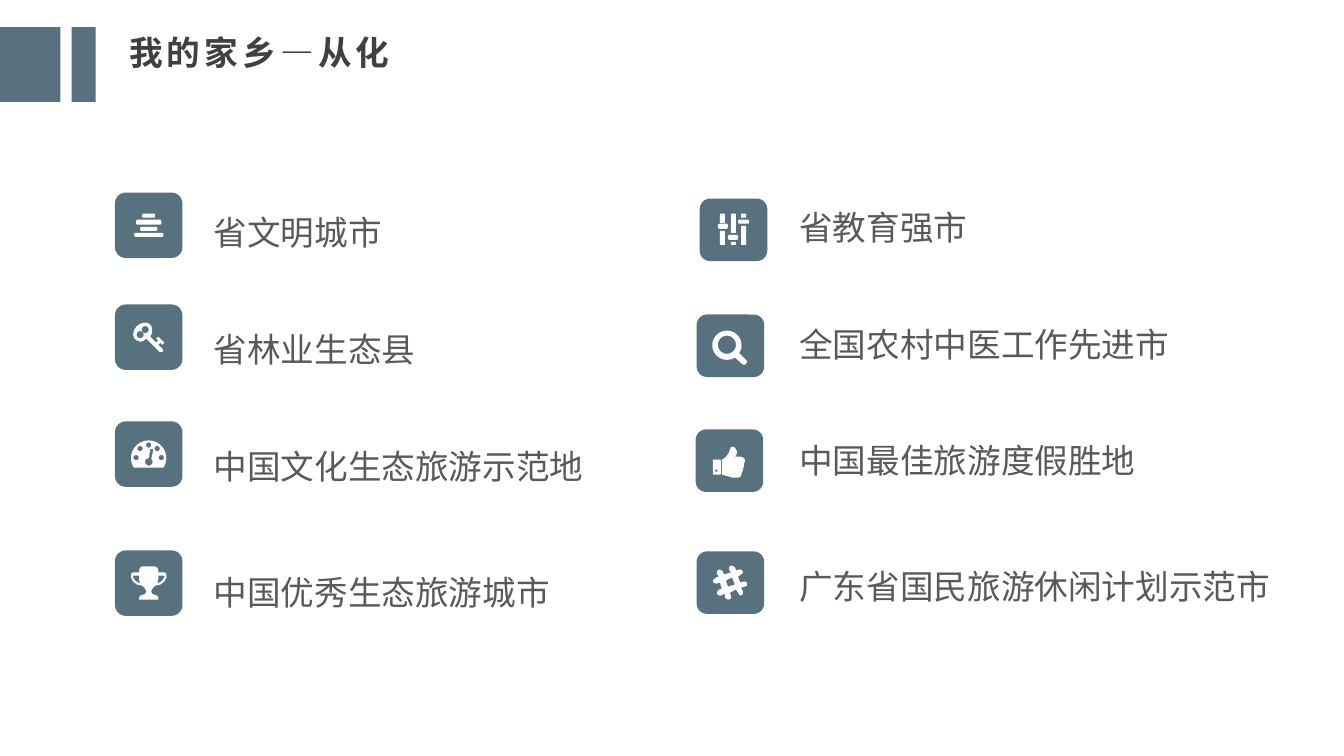
from dataclasses import dataclass
from math import cos, radians, sin

from pptx import Presentation
from pptx.dml.color import RGBColor
from pptx.enum.shapes import MSO_SHAPE as Shape
from pptx.enum.text import MSO_ANCHOR as Anchor, MSO_AUTO_SIZE as AutoSize, PP_ALIGN as Align
from pptx.oxml.ns import qn
from pptx.util import Inches, Pt

SLATE, WHITE, GREY, DARK = "58717E", "FFFFFF", "595959", "404040"
CJK = "Noto Sans CJK SC"
Contour = list[tuple[float, float]]


# Outline helpers, in hundredths of an inch from the icon's top left corner
def arc(cx: float, cy: float, radius: float, start: float, end: float, steps: int = 32) -> Contour:
    angles = [radians(start + (end - start) * i / steps) for i in range(steps + 1)]
    return [(cx + radius * cos(a), cy + radius * sin(a)) for a in angles]


def circle(cx: float, cy: float, radius: float) -> Contour:
    return arc(cx, cy, radius, 0, 360)


def bar(x: float, y: float, w: float, h: float, cut: float = 1) -> Contour:
    r, b = x + w, y + h
    return [(x + cut, y), (r - cut, y), (r, y + cut), (r, b - cut),
            (r - cut, b), (x + cut, b), (x, b - cut), (x, y + cut)]


def mirror(points: Contour, width: float) -> Contour:
    return [(width - x, y) for x, y in reversed(points)]


# Icon outlines; inner contours are holes
LAYERS = [bar(8, 0, 13, 4), bar(2, 6, 25, 5), bar(6, 13, 17, 4), bar(0, 19, 29, 4)]

KEY = [
    [(29, 22), (27, 20), (25, 22), (29, 26), (30, 28), (29, 29), (26, 29), (13, 16),
     (10, 18.4), (7, 19), (3, 17.5), (0.8, 15), (0, 12), (1, 7.5), (3.6, 3.6), (7.5, 1),
     (12, 0), (15.5, 0.8), (18, 3), (19, 7), (18.5, 11), (17, 14), (23, 20), (25, 18),
     (23, 16), (25, 14), (31, 20)],
    circle(12, 7, 3.5), circle(7, 12, 3.5),
]

GAUGE = [
    arc(17.5, 17.5, 17.5, 148, 392) + [(32, 27), (4, 27)],
    *[circle(x, y, 2.6) for x, y in [(5, 17), (9, 8), (17.5, 4.5), (26, 8), (30, 17)]],
    arc(17.7, 21.2, 3.7, 270, -50) + [(22, 10), (21.5, 8.5), (20, 8.3), (19, 9)],
]

CUP_RIGHT = [(24, 0), (26.2, 1.3), (27, 4), (27, 6), (33, 6), (34.5, 6.6), (35, 8), (35, 11),
             (33, 15), (29, 18), (24, 19), (22, 21), (20.5, 23), (20, 25), (20.8, 27),
             (23, 28), (26, 29), (27, 31), (27, 33)]
CUP_HANDLE = [(27, 9), (33, 9), (33, 11), (30.5, 14.5), (26, 17), (27, 13)]
TROPHY = [CUP_RIGHT + mirror(CUP_RIGHT, 35), CUP_HANDLE, mirror(CUP_HANDLE, 35)]

SLIDERS = [
    bar(0, 10, 10, 5), bar(2, 0, 5, 9, 0.4), bar(2, 17, 5, 14, 0.4),
    bar(10, 21, 10, 5), bar(13, 0, 5, 19, 0.4), bar(13, 28, 5, 3, 0.4),
    bar(20, 6, 11, 4), bar(23, 0, 5, 4, 0.4), bar(23, 12, 5, 19, 0.4),
]

SEARCH = [
    [(33, 29), (34, 31), (33, 33), (31, 34), (29, 33)] + arc(14, 14.5, 14.5, 57, 393),
    circle(14, 14, 9),
]

THUMB = [
    [(8, 27), (7, 28), (0, 28), (0, 13), (7, 13), (8, 14)],
    circle(3.5, 24, 1.2),
    [(31, 17), (31, 19), (30, 22), (30, 24), (29, 25), (28, 29), (26.5, 30.5), (24, 31),
     (20, 31), (13, 29), (9, 28), (9, 13), (11, 12), (14, 9), (16, 6), (17, 3), (18, 0.5),
     (19, 0), (22, 1), (24, 5), (23.5, 8), (22, 10), (28, 10), (31, 11.5), (32, 14)],
]

HASH = [
    [(34, 18), (33.7, 20), (32, 21), (28, 22), (30, 26), (29.5, 29), (27, 30), (25, 27),
     (23, 24), (17, 27), (18, 30), (18, 33), (15, 34), (12, 32), (12, 28), (8, 30),
     (5, 29.5), (4, 27), (6, 24), (9, 23), (7, 17), (4, 18), (1, 17.5), (0, 15), (3, 12),
     (6, 11), (4, 8), (4.5, 5), (7, 4), (10, 6), (11, 9), (18, 7), (16, 4), (16.5, 1),
     (19, 0), (22, 2), (23, 5), (26, 4), (29, 4.5), (30, 7), (28, 9), (25, 11), (27, 17),
     (30, 16), (33, 16)],
    [(22, 19), (19, 12), (13, 15), (15, 21)],
]


@dataclass
class Honour:
    text: str
    label: tuple[float, float]
    tile: tuple[float, float]
    icon: tuple[float, float]
    outline: list[Contour]
    width: float = 4.49


ROWS = [1.97, 3.13, 4.29, 5.54]
LEFT_X, RIGHT_X, RIGHT_RISE = 2.02, 7.83, 0.05
LEFT = [
    Honour("省文明城市", (LEFT_X, ROWS[0]), (1.14, 1.91), (1.33, 2.12), LAYERS),
    Honour("省林业生态县", (LEFT_X, ROWS[1]), (1.14, 3.02), (1.32, 3.2), KEY),
    Honour("中国文化生态旅游示范地", (LEFT_X, ROWS[2]), (1.14, 4.18), (1.3, 4.37), GAUGE),
    Honour("中国优秀生态旅游城市", (LEFT_X, ROWS[3]), (1.14, 5.46), (1.3, 5.62), TROPHY),
]
RIGHT_ROWS = [y - RIGHT_RISE for y in ROWS]
RIGHT = [
    Honour("省教育强市", (RIGHT_X, RIGHT_ROWS[0]), (6.94, 1.97), (7.12, 2.12), SLIDERS),
    Honour("全国农村中医工作先进市", (RIGHT_X, RIGHT_ROWS[1]), (6.91, 3.12), (7.07, 3.28), SEARCH),
    Honour("中国最佳旅游度假胜地", (RIGHT_X, RIGHT_ROWS[2]), (6.9, 4.26), (7.07, 4.43), THUMB),
    Honour("广东省国民旅游休闲计划示范市", (RIGHT_X, RIGHT_ROWS[3]), (6.91, 5.47), (7.07, 5.61),
           HASH, 5.06),
]


# Drawing functions
def paint(shape, color: str) -> None:
    shape.shadow.inherit = False
    shape.fill.solid()
    shape.fill.fore_color.rgb = RGBColor.from_string(color)
    shape.line.fill.background()


def add_box(shapes, kind: Shape, x: float, y: float, w: float, h: float) -> None:
    paint(shapes.add_shape(kind, Inches(x), Inches(y), Inches(w), Inches(h)), SLATE)


def add_icon(shapes, x: float, y: float, outline: list[Contour]) -> None:
    fine = [[(px * 100, py * 100) for px, py in contour] for contour in outline]
    builder = shapes.build_freeform(*fine[0][0], scale=Inches(1) / 10000)
    builder.add_line_segments(fine[0][1:])
    for contour in fine[1:]:
        builder.move_to(*contour[0])
        builder.add_line_segments(contour[1:])
    paint(builder.convert_to_shape(Inches(x), Inches(y)), WHITE)


def write(tf, text: str, *, font: str, color: str, size: float = 24, bold: bool = False,
          line: float = 1, before: float = 0, spacing: int = 0) -> None:
    tf.word_wrap = True
    p = tf.paragraphs[0]
    p.alignment = Align.LEFT
    p.line_spacing, p.space_before = line, Pt(before)
    r = p.add_run()
    r.text = text
    r.font.name, r.font.size, r.font.bold = font, Pt(size), bold
    r.font.color.rgb = RGBColor.from_string(color)
    rPr = r.font._element
    if spacing:
        rPr.set("spc", str(spacing * 100))
    ea = rPr.makeelement(qn("a:ea"), {"typeface": CJK})
    rPr.find(qn("a:latin")).addnext(ea)


def add_honour(s, honour: Honour, tile_h: float) -> None:
    x, y = honour.label
    tf = s.shapes.add_textbox(Inches(x), Inches(y), Inches(honour.width), Inches(0.54)).text_frame
    tf.auto_size = AutoSize.SHAPE_TO_FIT_TEXT
    write(tf, honour.text, font="Arial", color=GREY, line=1.2, before=4.8)
    badge = s.shapes.add_group_shape()
    add_box(badge.shapes, Shape.ROUNDED_RECTANGLE, *honour.tile, 0.67, tile_h)
    add_icon(badge.shapes, *honour.icon, honour.outline)


def main() -> None:
    prs = Presentation()
    prs.slide_width, prs.slide_height = Inches(13.33), Inches(7.5)
    s = prs.slides.add_slide(prs.slide_layouts[5])

    # Title
    title = s.shapes.title
    title.left, title.top = Inches(1.21), Inches(0.28)
    title.width, title.height = Inches(11.08), Inches(0.47)
    tf = title.text_frame
    tf.margin_left = tf.margin_right = Inches(0.07)
    tf.margin_top = tf.margin_bottom = Inches(0.03)
    tf.vertical_anchor, tf.auto_size = Anchor.MIDDLE, AutoSize.NONE
    write(tf, "我的家乡—从化", font=CJK, color=DARK, bold=True, spacing=3)

    # Header blocks
    for x, w in [(0, 0.6), (0.71, 0.24)]:
        add_box(s.shapes, Shape.RECTANGLE, x, 0.27, w, 0.74)

    # Honours in two columns
    for column, tile_h in [(LEFT, 0.65), (RIGHT, 0.62)]:
        for honour in column:
            add_honour(s, honour, tile_h)

    prs.save("out.pptx")


if __name__ == "__main__":
    main()
